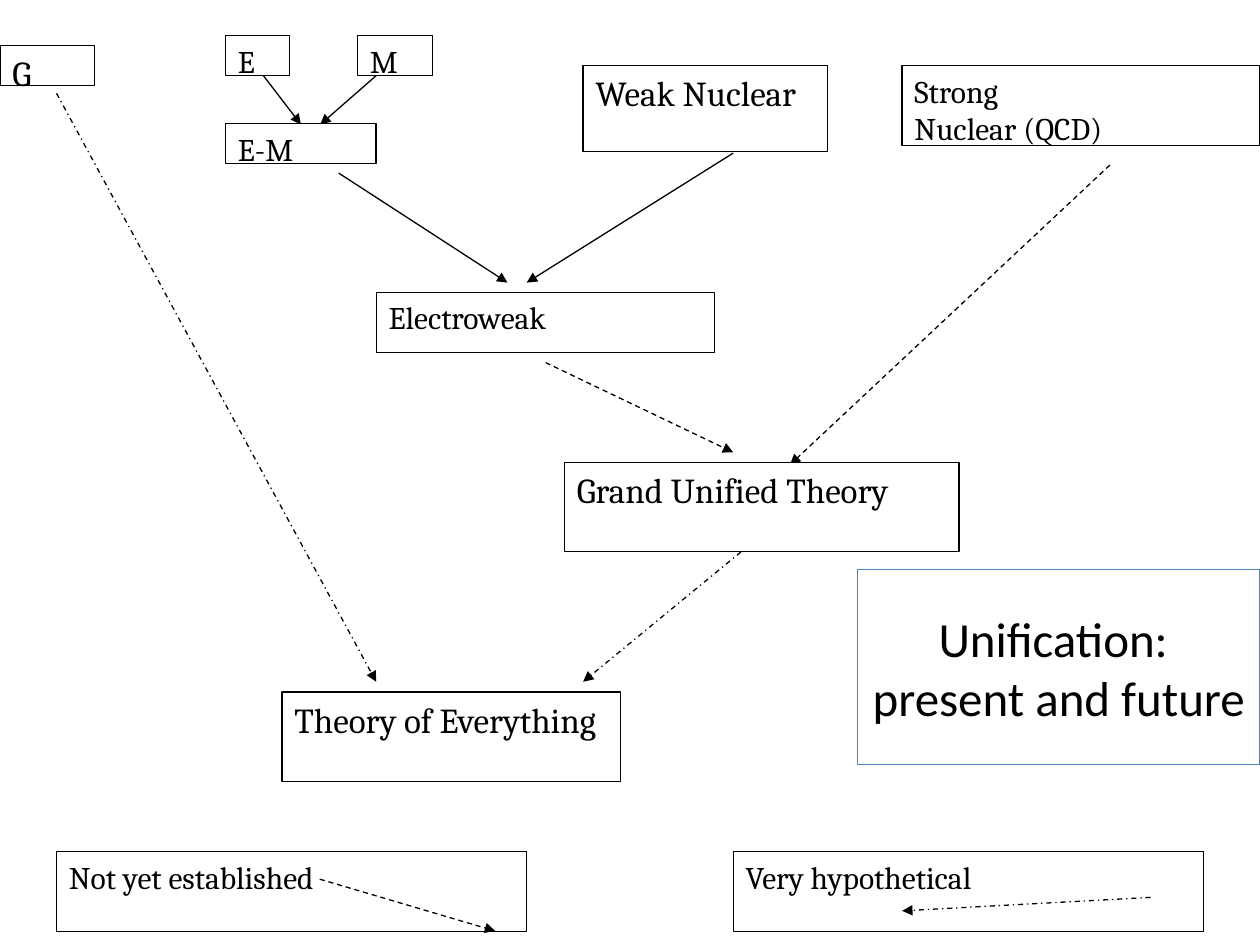
import pptx
import pptx.util
import pptx.dml.color
import pptx.enum.dml
import pptx.enum.shapes
import pptx.enum.text
import pptx.oxml

Pt = pptx.util.Pt
DASH = pptx.enum.dml.MSO_LINE
ALIGN = pptx.enum.text.PP_ALIGN
ANCHOR = pptx.enum.text.MSO_ANCHOR

THEME = {
    "ink": "000000", "paper": "FFFFFF", "accent": "4F81BD",
    "serif": "Cambria", "sans": "Calibri",
    "small": 18, "large": 20, "title": 28, "line": 0.75,
}

BOXES = [
    ("E", "small", 128.9, 20.2, 36.7, 23),
    ("M", "small", 204.3, 20.2, 43, 23),
    ("E-M", "small", 128.9, 70.5, 86, 23),
    ("G", "large", 0, 25.9, 53.9, 23),
    ("Weak Nuclear", "large", 333.2, 37.4, 139.6, 49.4),
    ("Electroweak", "small", 215, 167, 193.5, 34.4),
    ("Strong\nNuclear (QCD)", "small", 515.5, 37.4, 204.5, 45.7),
    ("Grand Unified Theory", "large", 322.5, 264.2, 225.6, 51.2),
    ("Theory of Everything", "large", 161.2, 395.4, 193.5, 51.2),
    ("Not yet established", "small", 32.3, 486.7, 268.7, 45.7),
    ("Very hypothetical", "small", 419, 486.7, 268.7, 45.7),
]
TITLE = ("Unification: \vpresent and future", "title", 490, 325.4, 230, 111.5)

KNOWN, OPEN, GUESS = None, DASH.DASH, DASH.DASH_DOT
LINKS = [
    (KNOWN, 150.5, 43.2, 172, 71.2),
    (KNOWN, 215, 43.2, 183, 71.2),
    (KNOWN, 193.5, 98.9, 290, 161.5),
    (KNOWN, 419, 87.5, 301, 161.5),
    (OPEN, 634.3, 94.3, 451.5, 265.5),
    (OPEN, 311.8, 207.2, 419, 258.5),
    (GUESS, 32.3, 53.3, 215, 389.6),
    (GUESS, 423.4, 315.4, 333.2, 389.6),
]
LEGEND = [
    (OPEN, 182.7, 502.4, 283, 532),
    (GUESS, 657.5, 512.8, 515.5, 520.5),
]


def tint(name):
    return pptx.dml.color.RGBColor.from_string(THEME[name])


def add_box(slide, text, size, *place, face="serif", edge="ink"):
    box = slide.shapes.add_shape(
        pptx.enum.shapes.MSO_SHAPE.RECTANGLE, *map(Pt, place))
    box.shadow.inherit = False
    box.fill.solid()
    box.fill.fore_color.rgb = tint("paper")
    box.line.color.rgb = tint(edge)
    box.line.width = Pt(THEME["line"])
    frame = box.text_frame
    frame.word_wrap = True
    title = size == "title"
    frame.vertical_anchor = ANCHOR.MIDDLE if title else ANCHOR.TOP
    frame.text = text
    for para in frame.paragraphs:
        para.alignment = ALIGN.CENTER if title else ALIGN.LEFT
        for run in para.runs:
            run.font.name = THEME[face]
            run.font.size = Pt(THEME[size])
            run.font.color.rgb = tint("ink")


def add_link(slide, dash, *ends):
    link = slide.shapes.add_connector(
        pptx.enum.shapes.MSO_CONNECTOR.STRAIGHT, *map(Pt, ends))
    link.line.color.rgb = tint("ink")
    link.line.width = Pt(THEME["line"])
    if dash:
        link.line.dash_style = dash
    props = link._element.spPr
    tail = pptx.oxml.ns.qn("a:tailEnd")
    link.line._get_or_add_ln().append(
        props.makeelement(tail, {"type": "triangle"}))
    props.append(props.makeelement(pptx.oxml.ns.qn("a:effectLst"), {}))


def main():
    deck = pptx.Presentation()
    deck.slide_width, deck.slide_height = Pt(720), Pt(540)
    slide = deck.slides.add_slide(deck.slide_layouts[6])
    for link in LINKS:
        add_link(slide, *link)
    for box in BOXES:
        add_box(slide, *box)
    for link in LEGEND:
        add_link(slide, *link)
    add_box(slide, *TITLE, face="sans", edge="accent")
    deck.save("out.pptx")


if __name__ == "__main__":
    main()
